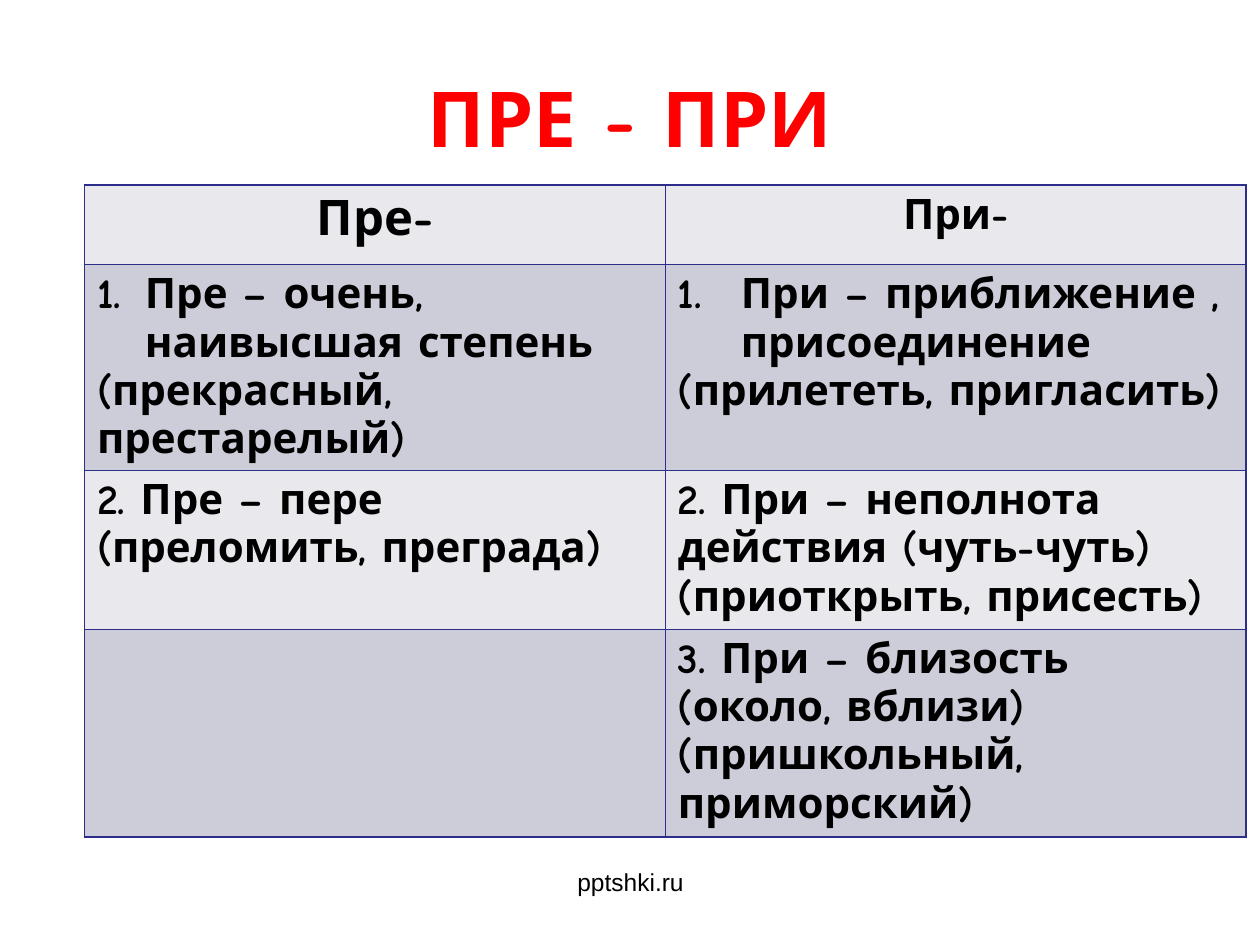
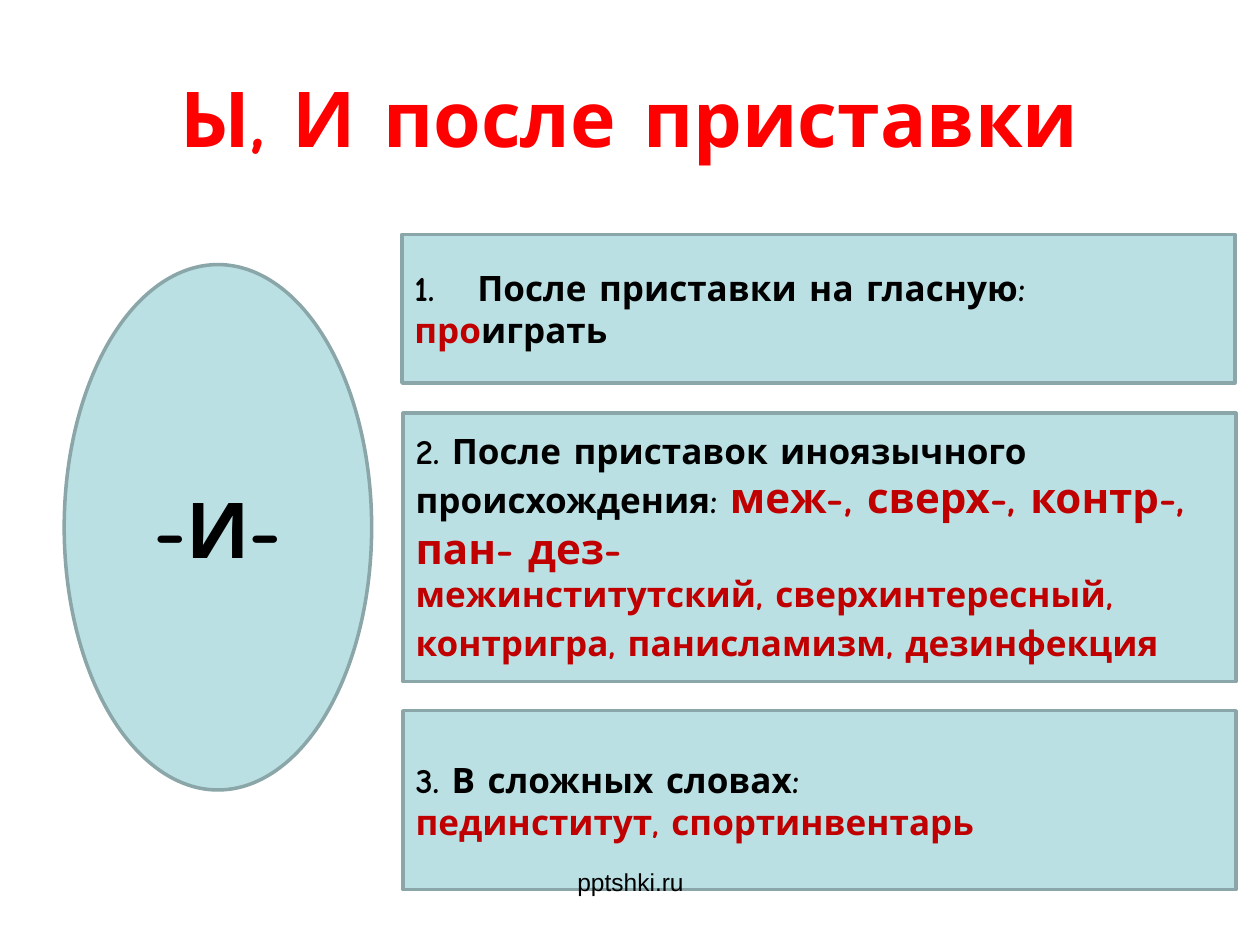
from dataclasses import dataclass
from typing import Optional

import pptx
import pptx.dml.color
import pptx.enum.shapes
import pptx.enum.text
import pptx.oxml.ns
import pptx.util
from lxml import etree

Inches = pptx.util.Inches
Pt = pptx.util.Pt
Align = pptx.enum.text.PP_ALIGN
Anchor = pptx.enum.text.MSO_ANCHOR
Preset = pptx.enum.shapes.MSO_SHAPE

COLORS = {
    "title": "FF0000",
    "text": "000000",
    "accent": "C00000",
    "light_row": "E8E8ED",
    "dark_row": "CDCDDA",
    "grid": "2D2D8A",
    "panel": "BBE0E3",
    "panel_edge": "8AA6A8",
}
HEAD_FONT = "Comic Neue"
FOOTER_FONT = "Arial"
FOOTER = "pptshki.ru"


@dataclass(frozen=True)
class Span:
    text: str
    size: Optional[float] = None
    color: Optional[str] = None


@dataclass(frozen=True)
class Line:
    spans: tuple[Span, ...]
    size: float = 20
    color: str = "text"
    align: Align = Align.LEFT
    number_indent: float = 0
    font: str = HEAD_FONT
    bold: bool = True


@dataclass(frozen=True)
class Panel:
    preset: Preset
    left: float
    top: float
    width: float
    height: float
    lines: tuple[Line, ...]


def line(text: str, size: float = 20, color: str = "text", **options) -> Line:
    return Line((Span(text),), size, color, **options)


def rgb(name: str) -> pptx.dml.color.RGBColor:
    return pptx.dml.color.RGBColor.from_string(COLORS[name])


def number_paragraph(paragraph, indent: float) -> None:
    properties = paragraph._p.get_or_add_pPr()
    properties.set("marL", str(Inches(indent)))
    properties.set("indent", str(-Inches(indent)))
    bullet = etree.SubElement(properties, pptx.oxml.ns.qn("a:buAutoNum"))
    bullet.set("type", "arabicPeriod")


def write_lines(frame, lines: tuple[Line, ...]) -> None:
    frame.word_wrap = True
    for index, item in enumerate(lines):
        paragraph = frame.add_paragraph() if index else frame.paragraphs[0]
        paragraph.alignment = item.align
        if item.number_indent:
            number_paragraph(paragraph, item.number_indent)
        paragraph.font.name = item.font
        paragraph.font.size = Pt(item.size)
        paragraph.font.bold = item.bold
        paragraph.font.color.rgb = rgb(item.color)
        for span in item.spans:
            run = paragraph.add_run()
            run.text = span.text
            if span.size:
                run.font.size = Pt(span.size)
            run.font.color.rgb = rgb(span.color or item.color)


def add_page(deck, title: str):
    page = deck.slides.add_slide(deck.slide_layouts[5])
    box = page.shapes.title
    box.left, box.top = Inches(0.5), Inches(0.3)
    box.width, box.height = Inches(9), Inches(1.25)
    box.text_frame.vertical_anchor = Anchor.MIDDLE
    write_lines(box.text_frame, (line(title, 44, "title", align=Align.CENTER),))
    return page


def add_footer(page) -> None:
    box = page.shapes.add_textbox(Inches(3.42), Inches(6.83), Inches(3.17), Inches(0.52))
    footer = line(FOOTER, 14, align=Align.CENTER, font=FOOTER_FONT, bold=False)
    write_lines(box.text_frame, (footer,))


def add_panel(page, panel: Panel) -> None:
    shape = page.shapes.add_shape(
        panel.preset, Inches(panel.left), Inches(panel.top),
        Inches(panel.width), Inches(panel.height))
    shape.shadow.inherit = False
    shape.fill.solid()
    shape.fill.fore_color.rgb = rgb("panel")
    shape.line.color.rgb = rgb("panel_edge")
    shape.line.width = Pt(2)
    shape.text_frame.vertical_anchor = Anchor.MIDDLE
    write_lines(shape.text_frame, panel.lines)


def border_cell(cell) -> None:
    properties = cell._tc.get_or_add_tcPr()
    for side in ("a:lnL", "a:lnR", "a:lnT", "a:lnB"):
        edge = etree.SubElement(properties, pptx.oxml.ns.qn(side))
        edge.set("w", str(Pt(1)))
        fill = etree.SubElement(edge, pptx.oxml.ns.qn("a:solidFill"))
        color = etree.SubElement(fill, pptx.oxml.ns.qn("a:srgbClr"))
        color.set("val", COLORS["grid"])


def add_prefix_table(page, rows: list, heights: list[float], column_width: float) -> None:
    columns = len(rows[0])
    table = page.shapes.add_table(
        len(rows), columns, Inches(0.67), Inches(1.47),
        Inches(column_width * columns), Inches(sum(heights))).table
    table.first_row = False
    table.horz_banding = False
    for column in table.columns:
        column.width = Inches(column_width)
    for row_index, (row, height) in enumerate(zip(rows, heights)):
        table.rows[row_index].height = Inches(height)
        for column_index, lines in enumerate(row):
            cell = table.cell(row_index, column_index)
            border_cell(cell)
            cell.fill.solid()
            cell.fill.fore_color.rgb = rgb("dark_row" if row_index % 2 else "light_row")
            write_lines(cell.text_frame, lines)


def build_prefix_page(deck) -> None:
    page = add_page(deck, "ПРЕ - ПРИ")
    rows = [
        ((line("Пре-", 28, align=Align.CENTER),),
         (line("При-", 24, align=Align.CENTER),)),
        ((line("Пре – очень, наивысшая степень", 24, number_indent=0.38),
          line("(прекрасный, престарелый)", 24)),
         (line("При – приближение , присоединение", 24, number_indent=0.5),
          line("(прилететь, пригласить)", 24))),
        ((line("2. Пре – пере", 24),
          line("(преломить, преграда)", 24)),
         (line("2. При – неполнота действия (чуть-чуть)", 24),
          line("(приоткрыть, присесть)", 24))),
        ((),
         (line("3. При – близость (около, вблизи)", 24),
          line("(пришкольный, приморский)", 24))),
    ]
    add_prefix_table(page, rows, [0.63, 1.26, 1.26, 1.65], 4.61)
    add_footer(page)


def build_vowel_page(deck) -> None:
    page = add_page(deck, "Ы, И после приставки")
    panels = (
        Panel(Preset.OVAL, 0.51, 2.1, 2.44, 4.17,
              (line("-И-", 44, align=Align.CENTER),)),
        Panel(Preset.RECTANGLE, 3.19, 1.86, 6.61, 1.18, (
            line("После приставки на гласную:", number_indent=0.5),
            Line((Span("про", color="accent"), Span("играть"))))),
        Panel(Preset.RECTANGLE, 3.2, 3.28, 6.61, 2.13, (
            Line((Span("2. После приставок иноязычного происхождения: "),
                  Span("меж-, сверх-, контр-, пан- дез-", 24, "accent"))),
            Line((Span("межинститутский, сверхинтересный, контригра, "
                       "панисламизм, дезинфекция"),
                  Span(" ", 24)), color="accent"))),
        Panel(Preset.RECTANGLE, 3.2, 5.64, 6.61, 1.42, (
            line("3. В сложных словах:"),
            line("пединститут, спортинвентарь", color="accent"))),
    )
    for panel in panels:
        add_panel(page, panel)
    add_footer(page)


def main() -> None:
    deck = pptx.Presentation()
    deck.slide_width, deck.slide_height = Inches(10), Inches(7.5)
    build_prefix_page(deck)
    build_vowel_page(deck)
    deck.save("out.pptx")


if __name__ == "__main__":
    main()
